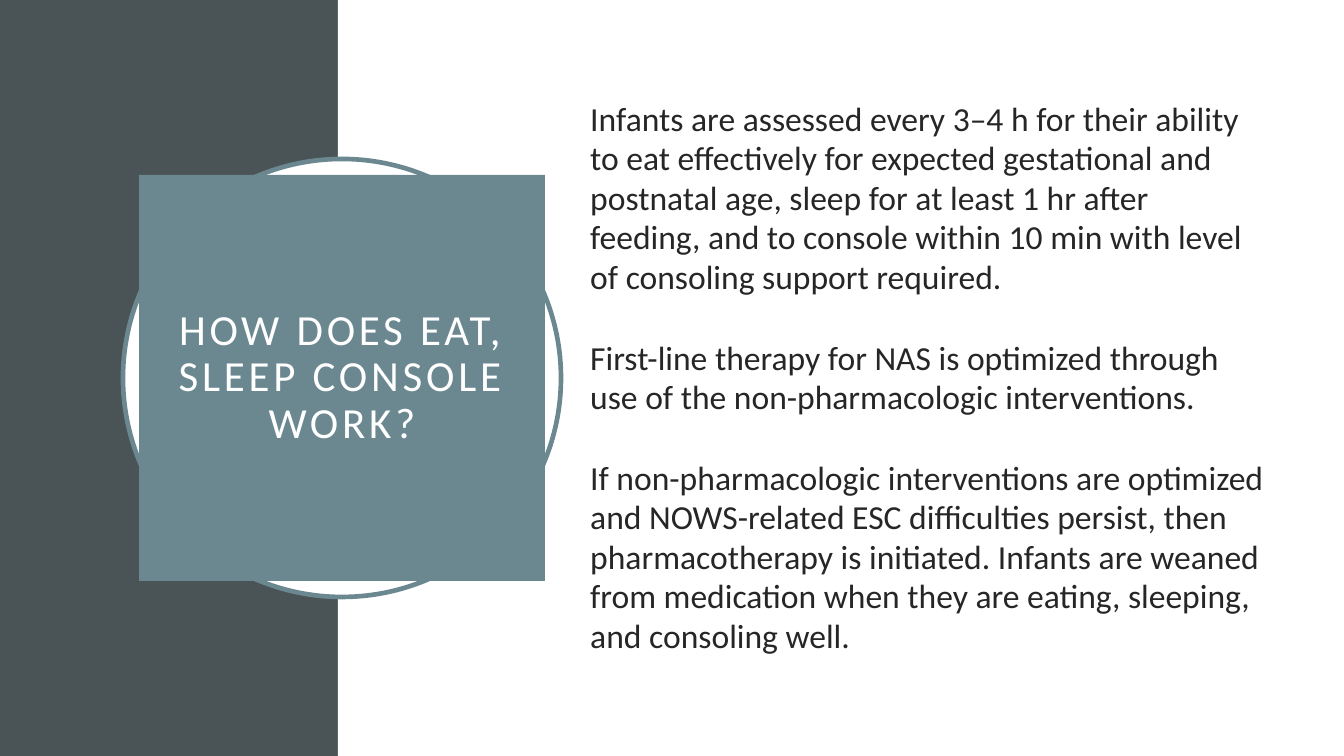
from pptx import Presentation, util as u
from pptx.dml.color import RGBColor
from pptx.enum import shapes, text

TITLE = "HOW DOES EAT, SLEEP CONSOLE WORK?"
PROTOCOL = [
    "Infants are assessed every 3–4 h for their ability to eat effectively for "
    "expected gestational and postnatal age, sleep for at least 1 hr after feeding, "
    "and to console within 10 min with level of consoling support required.",
    "First-line therapy for NAS is optimized through use of the non-pharmacologic "
    "interventions.",
    "If non-pharmacologic interventions are optimized and NOWS-related ESC "
    "difficulties persist, then pharmacotherapy is initiated. Infants are weaned "
    "from medication when they are eating, sleeping, and consoling well.",
]

FONT = "Calibri"
SLATE = RGBColor(0x4A, 0x53, 0x56)
TEAL = RGBColor(0x6B, 0x88, 0x91)
WHITE = RGBColor(0xFF, 0xFF, 0xFF)
INK = RGBColor(0x26, 0x26, 0x26)

WIDTH, HEIGHT = 1344, 756
BAND = 338
CENTER_X, CENTER_Y = 342, 378
RING, BADGE = 438, 406
BADGE_INSET = 27
BODY = (577, 34, 702, 688)


def px(n):
    return round(n * 914400 / 134.4)


def box(left, top, width, height):
    return [px(n) for n in (left, top, width, height)]


def centered(size):
    return CENTER_X - size // 2, CENTER_Y - size // 2, size, size


def add_filled(slide, preset, place, fill, line=None):
    shape = slide.shapes.add_shape(preset, *box(*place))
    shape.shadow.inherit = False
    shape.fill.solid()
    shape.fill.fore_color.rgb = fill
    if line is None:
        shape.line.fill.background()
    else:
        shape.line.color.rgb = line
        shape.line.width = u.Pt(2.5)
    return shape


def add_run(paragraph, words, size, color):
    run = paragraph.add_run()
    run.text = words
    run.font.name = FONT
    run.font.size = u.Pt(size)
    run.font.color.rgb = color
    return run


def main():
    prs = Presentation()
    prs.slide_width, prs.slide_height = px(WIDTH), px(HEIGHT)
    slide = prs.slides.add_slide(prs.slide_layouts[6])

    preset = shapes.MSO_SHAPE
    add_filled(slide, preset.RECTANGLE, (0, 0, BAND, HEIGHT), SLATE)
    add_filled(slide, preset.RECTANGLE, (BAND, 0, WIDTH - BAND, HEIGHT), WHITE)
    add_filled(slide, preset.OVAL, centered(RING), WHITE, TEAL)

    badge = add_filled(slide, preset.RECTANGLE, centered(BADGE), TEAL).text_frame
    badge.word_wrap = True
    badge.vertical_anchor = text.MSO_ANCHOR.MIDDLE
    badge.margin_left = badge.margin_right = px(BADGE_INSET)
    badge.margin_top = badge.margin_bottom = px(BADGE_INSET)
    heading = badge.paragraphs[0]
    heading.alignment = text.PP_ALIGN.CENTER
    heading.line_spacing = 0.9
    title = add_run(heading, TITLE, 23, WHITE)
    title.font._element.set("spc", "200")  # letter spacing, 1/100 pt

    body = slide.shapes.add_textbox(*box(*BODY)).text_frame
    body.word_wrap = True
    body.vertical_anchor = text.MSO_ANCHOR.MIDDLE
    for i, step in enumerate(PROTOCOL):
        paragraph = body.add_paragraph() if i else body.paragraphs[0]
        paragraph.alignment = text.PP_ALIGN.LEFT
        paragraph.line_spacing = 0.98
        paragraph.space_before = u.Pt(10)
        paragraph.space_after = u.Pt(12)
        add_run(paragraph, step, 18, INK)

    prs.save("out.pptx")


if __name__ == "__main__":
    main()
